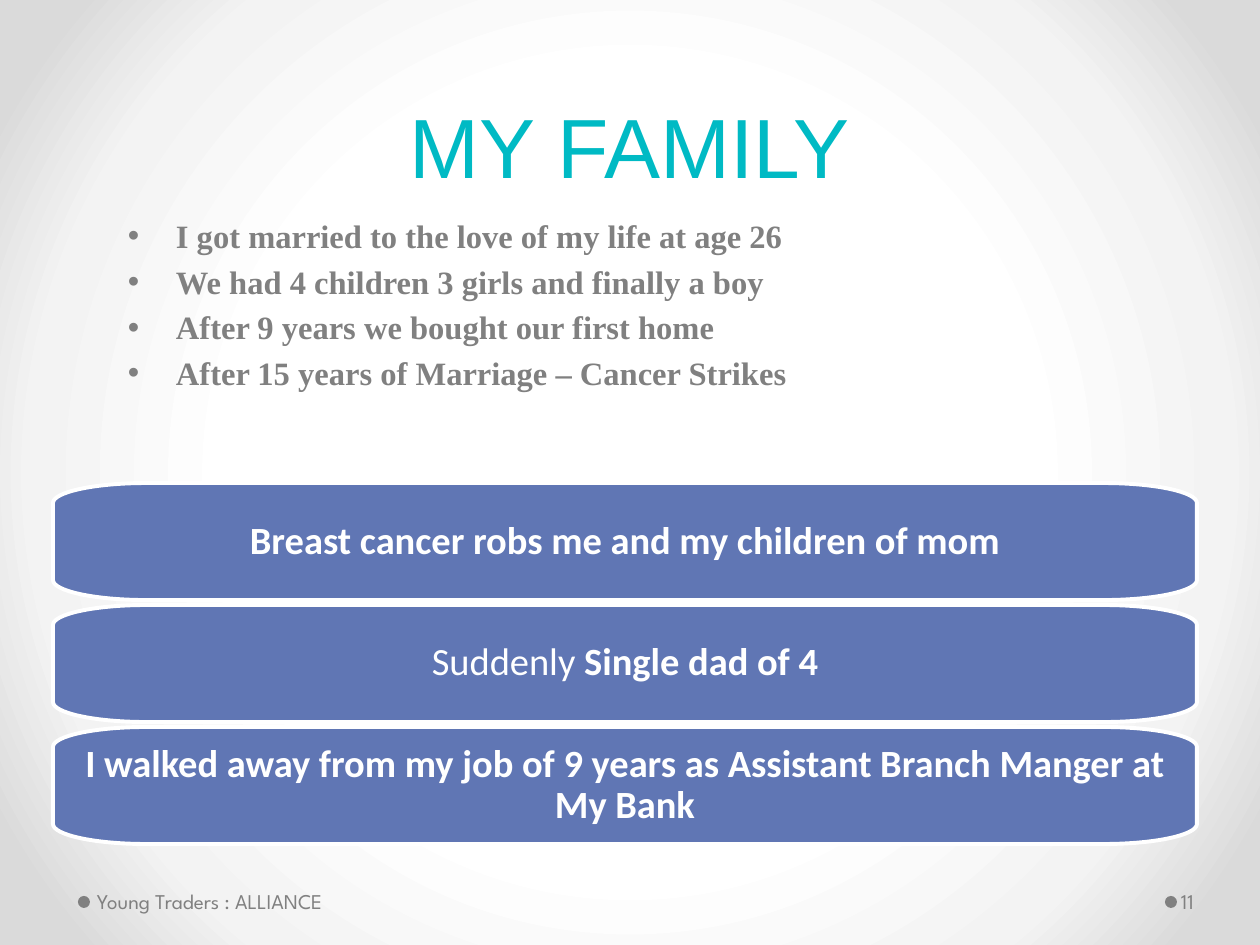
from dataclasses import dataclass

from lxml import etree
from pptx import Presentation
from pptx.dml.color import RGBColor
from pptx.enum.shapes import MSO_SHAPE
from pptx.enum.text import MSO_ANCHOR, PP_ALIGN
from pptx.oxml import parse_xml
from pptx.oxml.ns import nsdecls, qn
from pptx.util import Emu, Pt

# Content: a card is a list of (text, bold) runs
TITLE = "MY FAMILY"
BULLETS = [
    "I got married to the love of my life at age 26",
    "We had 4 children 3 girls and finally a boy",
    "After 9 years we bought our first home",
    "After 15 years of Marriage – Cancer Strikes",
]
CARDS = [
    [("Breast cancer robs me and my children of mom", True)],
    [("Suddenly", False), (" Single dad of 4", True)],
    [("I walked away from my job of 9 years as Assistant Branch Manger at My Bank", True)],
]
# Footer: text, text box, text insets, dot left
FOOTERS = [
    ("Young Traders : ALLIANCE", (91, 876, 392, 50), (6, 6, 13, 6), 78),
    ("11", (1177, 876, 77, 50), (4, 6, 6, 6), 1165),
]


@dataclass(frozen=True)
class Theme:
    title: str = "00BAC4"
    grey: str = "808080"
    card: str = "6076B4"
    white: str = "FFFFFF"
    glow: tuple = ((50, "FFFFFF"), (76, "F3F3F3"), (92, "DADADA"))
    title_font: str = "Arial"
    body_font: str = "Times New Roman"
    card_font: str = "Calibri"
    footer_font: str = "League Spartan"
    title_size: float = 48
    body_size: float = 18.6
    card_size: float = 22
    footer_size: float = 12


T = Theme()

# Layout in px, 126 to the inch
SLIDE_W, SLIDE_H = 1260, 945
CARD_X, CARD_Y, CARD_W, CARD_H, CARD_STEP = 53, 483, 1144, 117, 122
CORNER_X, CORNER_Y = 93, 20
CURVE = 0.45  # distance of a curve handle from the corner, as a share of the radius
DOT_Y, DOT_SIZE = 896, 12
INDENT = 48


def px(n):
    return Emu(round(n * 914400 / 126))


def rgb(value):
    return RGBColor.from_string(value)


def add_run(p, text, font, size, color, bold=False):
    r = p.add_run()
    r.text = text
    r.font.name, r.font.size, r.font.bold = font, Pt(size), bold
    r.font.color.rgb = rgb(color)


def set_frame(tf, anchor, insets):
    tf.word_wrap = True
    tf.vertical_anchor = anchor
    tf.margin_left, tf.margin_top, tf.margin_right, tf.margin_bottom = map(px, insets)


def add_text_box(slide, box, anchor=MSO_ANCHOR.TOP, insets=(13, 6, 13, 6)):
    tf = slide.shapes.add_textbox(*map(px, box)).text_frame
    set_frame(tf, anchor, insets)
    return tf


def add_bullet(p):
    pPr = p._p.get_or_add_pPr()
    pPr.set("marL", str(px(INDENT)))
    pPr.set("indent", str(-px(INDENT)))
    etree.SubElement(pPr, qn("a:buFont")).set("typeface", "Arial")
    etree.SubElement(pPr, qn("a:buChar")).set("char", "•")


def card_points(x, y, w, h):
    """Four points a corner, clockwise: curve start, two handles, curve end."""
    corners = [(x, y, 1, 1), (x + w, y, -1, 1), (x + w, y + h, -1, -1), (x, y + h, 1, -1)]
    points = []
    for index, (cx, cy, sx, sy) in enumerate(corners):
        shares = [(0, 1), (0, CURVE), (CURVE, 0), (1, 0)]
        if index % 2:
            shares.reverse()
        points += [
            (px(cx + sx * u * CORNER_X), px(cy + sy * v * CORNER_Y)) for u, v in shares
        ]
    return points


def round_corners(sp):
    """Merge the three segments of each corner into one curve."""
    segments = list(sp._element.iter(qn("a:lnTo")))
    for first in range(0, len(segments), 4):
        corner = segments[first:first + 3]
        curve = etree.Element(qn("a:cubicBezTo"))
        corner[0].addprevious(curve)
        for segment in corner:
            curve.append(segment[0])
            segment.getparent().remove(segment)


def add_background(slide):
    slide.background.fill.solid()
    bgPr = slide.background._cSld.bg.bgPr
    stops = "".join(
        f'<a:gs pos="{pos * 1000}"><a:srgbClr val="{color}"/></a:gs>' for pos, color in T.glow
    )
    gradient = parse_xml(
        f'<a:gradFill {nsdecls("a")} rotWithShape="1"><a:gsLst>{stops}</a:gsLst>'
        '<a:path path="circle"><a:fillToRect l="50000" t="50000" r="50000" b="50000"/>'
        "</a:path></a:gradFill>"
    )
    bgPr.replace(bgPr.find(qn("a:solidFill")), gradient)


def add_card(slide, index, runs):
    start, *rest = card_points(CARD_X, CARD_Y + index * CARD_STEP, CARD_W, CARD_H)
    builder = slide.shapes.build_freeform(*start)
    builder.add_line_segments(rest, close=True)
    sp = builder.convert_to_shape()
    round_corners(sp)
    sp.shadow.inherit = False
    sp.fill.solid()
    sp.fill.fore_color.rgb = rgb(T.card)
    sp.line.color.rgb = rgb(T.white)
    sp.line.width = Pt(2.25)
    set_frame(sp.text_frame, MSO_ANCHOR.MIDDLE, (21, 15, 21, 15))
    p = sp.text_frame.paragraphs[0]
    p.alignment, p.line_spacing = PP_ALIGN.CENTER, 0.9
    for text, bold in runs:
        add_run(p, text, T.card_font, T.card_size, T.white, bold)


def add_footer(slide, text, box, insets, dot_x):
    dot = slide.shapes.add_shape(
        MSO_SHAPE.OVAL, px(dot_x), px(DOT_Y), px(DOT_SIZE), px(DOT_SIZE)
    )
    dot.shadow.inherit = False
    dot.fill.solid()
    dot.fill.fore_color.rgb = rgb(T.grey)
    dot.line.fill.background()
    tf = add_text_box(slide, box, MSO_ANCHOR.MIDDLE, insets)
    add_run(tf.paragraphs[0], text, T.footer_font, T.footer_size, T.grey)


def main():
    prs = Presentation()
    prs.slide_width, prs.slide_height = px(SLIDE_W), px(SLIDE_H)
    slide = prs.slides.add_slide(prs.slide_layouts[6])
    add_background(slide)

    # Cards
    for index, runs in enumerate(CARDS):
        add_card(slide, index, runs)

    # Title
    p = add_text_box(slide, (63, 19, 1134, 182), MSO_ANCHOR.BOTTOM).paragraphs[0]
    p.alignment, p.line_spacing = PP_ALIGN.CENTER, Pt(58)
    add_run(p, TITLE, T.title_font, T.title_size, T.title)

    # Bullets
    tf = add_text_box(slide, (115, 210, 1144, 168))
    for index, text in enumerate(BULLETS):
        p = tf.add_paragraph() if index else tf.paragraphs[0]
        p.space_before = Pt(3.8)
        add_bullet(p)
        add_run(p, text, T.body_font, T.body_size, T.grey, True)

    # Footer
    for footer in FOOTERS:
        add_footer(slide, *footer)

    prs.save("out.pptx")


if __name__ == "__main__":
    main()
